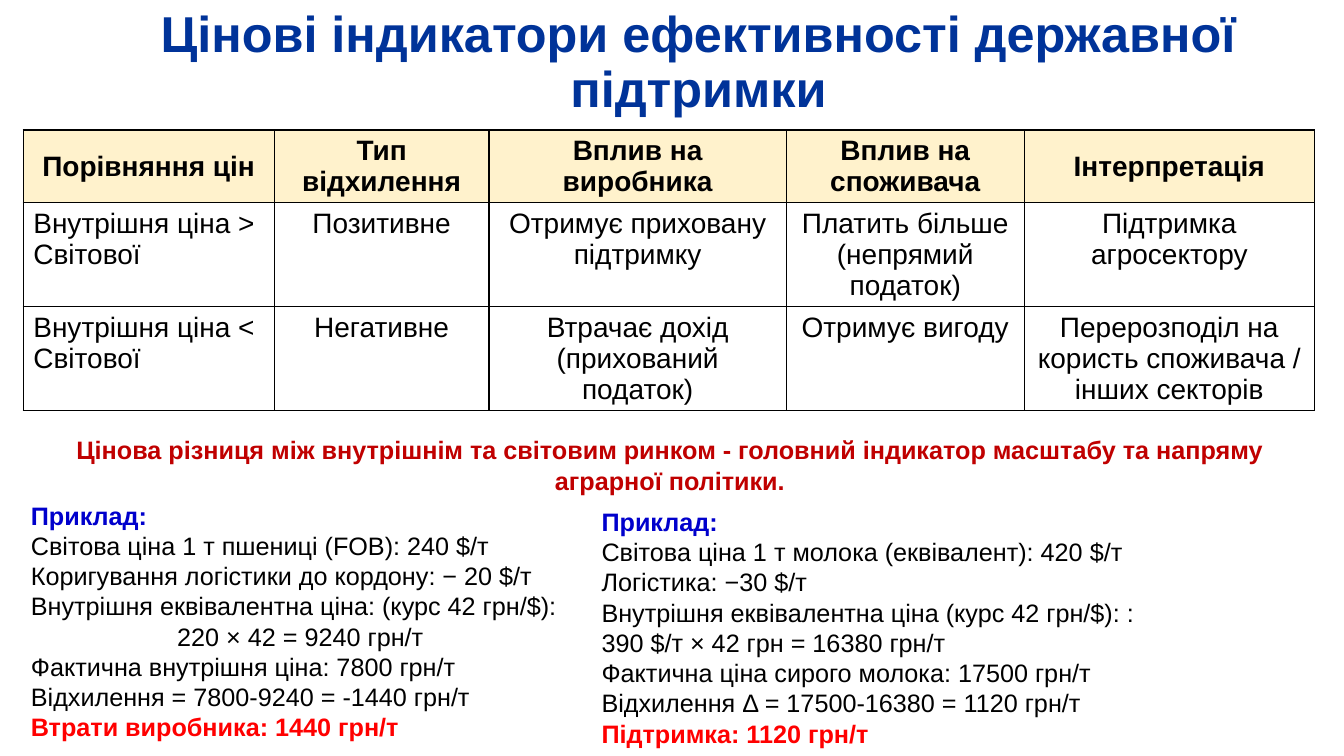
from collections import namedtuple
from dataclasses import dataclass

import pptx
import pptx.dml.color
import pptx.enum.text
import pptx.oxml
import pptx.oxml.ns
import pptx.util

Pt = pptx.util.Pt
ALIGN = pptx.enum.text.PP_ALIGN
ANCHOR = pptx.enum.text.MSO_ANCHOR
Box = namedtuple("Box", "left top width height")


@dataclass(frozen=True)
class Theme:
    font: str = "Arial"
    title: str = "003399"
    ink: str = "000000"
    conclusion: str = "C00000"
    example: str = "0000CC"
    result: str = "FF0000"
    header_fill: str = "FFF2CC"
    cell_fill: str = "FFFFFF"
    title_size: int = 36
    table_size: int = 20
    body_size: int = 18


THEME = Theme()

COLUMN_WIDTHS = [179.3, 153.4, 212.4, 169.9, 207.4]
ROW_HEIGHTS = [52, 74, 74]
PRICE_TABLE = [
    ["Порівняння цін", "Тип відхилення", "Вплив на виробника",
     "Вплив на споживача", "Інтерпретація"],
    ["Внутрішня ціна >\nСвітової", "Позитивне", "Отримує приховану підтримку",
     "Платить більше (непрямий податок)", "Підтримка агросектору"],
    ["Внутрішня ціна <\nСвітової", "Негативне", "Втрачає дохід (прихований податок)",
     "Отримує вигоду", "Перерозподіл на користь споживача / інших секторів"],
]
CONCLUSION = ("Цінова різниця між внутрішнім та світовим ринком - головний індикатор "
              "масштабу та напряму аграрної політики.")
WHEAT = [
    "Світова ціна 1 т пшениці (FOB): 240 $/т",
    "Коригування логістики до кордону: − 20 $/т",
    "Внутрішня еквівалентна ціна: (курс 42 грн/$):",
    "220 × 42 = 9240 грн/т",
    "Фактична внутрішня ціна: 7800 грн/т",
    "Відхилення = 7800-9240 = -1440 грн/т",
]
MILK = [
    "Світова ціна 1 т молока (еквівалент): 420 $/т",
    "Логістика: −30 $/т",
    "Внутрішня еквівалентна ціна (курс 42 грн/$): :",
    "390 $/т × 42 грн = 16380 грн/т",
    "Фактична ціна сирого молока: 17500 грн/т",
    "Відхилення Δ = 17500-16380 = 1120 грн/т",
]


def color(value):
    return pptx.dml.color.RGBColor.from_string(value)


def write(frame, text, size=THEME.body_size, ink=THEME.ink, bold=False,
          align=ALIGN.LEFT, spacing=None, append=False):
    for index, line in enumerate(text.split("\n")):
        para = frame.add_paragraph() if append or index else frame.paragraphs[0]
        para.alignment = align
        if spacing:
            para.line_spacing = spacing
        span = para.add_run()
        span.text = line
        span.font.name = THEME.font
        span.font.size = Pt(size)
        span.font.bold = bold
        span.font.color.rgb = color(ink)


def add_title(page, box):
    title = page.shapes.title
    title.left, title.top, title.width, title.height = map(Pt, box)
    title.text_frame.vertical_anchor = ANCHOR.MIDDLE
    title.text_frame.auto_size = pptx.enum.text.MSO_AUTO_SIZE.NONE
    write(title.text_frame, "Цінові індикатори ефективності державної підтримки",
          size=THEME.title_size, ink=THEME.title, bold=True,
          align=ALIGN.CENTER, spacing=0.9)


def add_borders(cell):
    properties = cell._tc.get_or_add_tcPr()
    for position, side in enumerate(("lnL", "lnR", "lnT", "lnB")):
        border = pptx.oxml.parse_xml(
            f'<a:{side} {pptx.oxml.ns.nsdecls("a")} w="{Pt(1)}"><a:solidFill>'
            f'<a:srgbClr val="{THEME.ink}"/></a:solidFill></a:{side}>')
        properties.insert(position, border)


def add_price_table(page, box):
    table = page.shapes.add_table(len(PRICE_TABLE), len(COLUMN_WIDTHS),
                                  *map(Pt, box)).table
    for column, width in zip(table.columns, COLUMN_WIDTHS):
        column.width = Pt(width)
    for row, height in zip(table.rows, ROW_HEIGHTS):
        row.height = Pt(height)
    for row_index, texts in enumerate(PRICE_TABLE):
        header = row_index == 0
        for column_index, text in enumerate(texts):
            cell = table.cell(row_index, column_index)
            cell.fill.solid()
            cell.fill.fore_color.rgb = color(THEME.header_fill if header else THEME.cell_fill)
            cell.vertical_anchor = ANCHOR.MIDDLE if header else ANCHOR.TOP
            centred = header or column_index > 0
            write(cell.text_frame, text, size=THEME.table_size, bold=header,
                  align=ALIGN.CENTER if centred else ALIGN.LEFT)
            add_borders(cell)


def add_text_frame(page, box):
    frame = page.shapes.add_textbox(*map(Pt, box)).text_frame
    frame.word_wrap = True
    return frame


def add_conclusion(page, box):
    write(add_text_frame(page, box), CONCLUSION, ink=THEME.conclusion,
          bold=True, align=ALIGN.CENTER)


def add_example(page, box, steps, result, centred_step=None):
    frame = add_text_frame(page, box)
    write(frame, "Приклад:", ink=THEME.example, bold=True)
    for index, step in enumerate(steps):
        write(frame, step, append=True,
              align=ALIGN.CENTER if index == centred_step else ALIGN.LEFT)
    write(frame, result, ink=THEME.result, bold=True, append=True)


def main():
    deck = pptx.Presentation()
    deck.slide_width, deck.slide_height = Pt(960), Pt(540)
    page = deck.slides.add_slide(deck.slide_layouts[5])
    add_title(page, Box(66, 7, 866, 77))
    add_price_table(page, Box(16.6, 92.9, sum(COLUMN_WIDTHS), sum(ROW_HEIGHTS)))
    add_conclusion(page, Box(7, 307, 943, 51))
    add_example(page, Box(15, 353.5, 399, 181.5), WHEAT,
                "Втрати виробника: 1440 грн/т", centred_step=3)
    add_example(page, Box(422.6, 358, 527, 181.5), MILK, "Підтримка: 1120 грн/т")
    deck.save("out.pptx")


if __name__ == "__main__":
    main()
